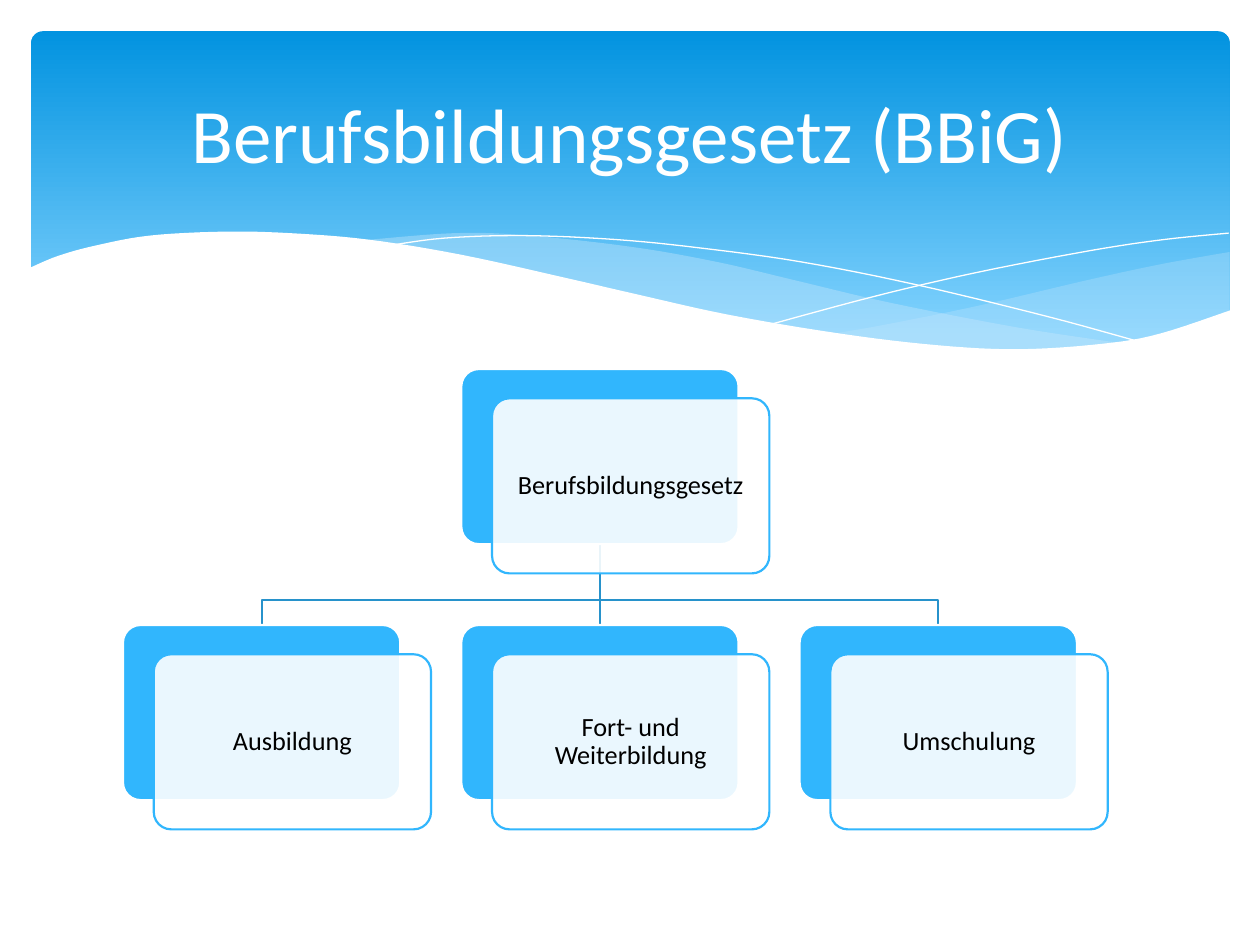
from lxml import etree
from pptx import Presentation
from pptx.dml.color import RGBColor
from pptx.enum import shapes, text
from pptx.oxml.ns import qn
from pptx.util import Cm, Pt

WHITE = RGBColor(0xFF, 0xFF, 0xFF)
BLACK = RGBColor(0, 0, 0)
DEEP = RGBColor(0x02, 0x93, 0xE0)
LIGHT = RGBColor(0x83, 0xD3, 0xFE)
PALE = RGBColor(0xC6, 0xE7, 0xFC)
BLUE = RGBColor(0x31, 0xB6, 0xFD)
STEEL = RGBColor(0x27, 0x92, 0xCB)
FONT = "Calibri"

# Outlines in centimetres; each list is a smooth curve through its points
RIGHT_TOP = [(24.79, 5.08), (23.39, 5.33), (21.87, 5.66), (19.79, 6.15),
             (17.93, 6.53), (16.79, 6.73)]
RIGHT_LOW = [(16.79, 6.73), (18.26, 6.91), (19.53, 7.04), (20.68, 7.06),
             (21.92, 6.99), (22.99, 6.83), (23.75, 6.65), (24.79, 6.27)]
MID_TOP = [(22.68, 6.93), (20.5, 6.6), (17.93, 6.1), (15.98, 5.64),
           (14.45, 5.28), (12.75, 4.98), (10.67, 4.75), (9.17, 4.7),
           (7.26, 4.85)]
MID_LOW = [(7.26, 4.85), (9.19, 5.16), (11.4, 5.64), (13.46, 6.1),
           (15.7, 6.55), (17.65, 6.86), (19.33, 7.04), (21.03, 7.06),
           (22.68, 6.93)]
FALL = [(7.85, 4.95), (8.97, 4.8), (10.57, 4.75), (12.42, 4.83), (14.12, 5),
        (16.15, 5.28), (18.47, 5.74), (21.11, 6.38), (23.04, 6.91)]
RISE = [(15.57, 6.53), (17.65, 5.97), (19.71, 5.49), (22, 5.05),
        (23.47, 4.83), (24.77, 4.7)]
EDGE = [(24.82, 6.25), (23.37, 6.73), (22.23, 6.93), (20.55, 7.04),
        (18.9, 6.96), (16.97, 6.73), (14.71, 6.35), (12.78, 5.92),
        (11.35, 5.59), (9.27, 5.13), (7.42, 4.83), (5.84, 4.7), (4.5, 4.67),
        (3.02, 4.75), (1.93, 4.95), (1.17, 5.16), (0.58, 5.41)]
FLOOR = [(0.58, 8.36), (24.82, 8.36)]

# Chart grid in centimetres
LEFT, STEP = 2.48, 6.82
TOP, ROW = 7.44, 12.6
WIDE, HIGH = 5.59, 3.53
SHIFT_X, SHIFT_Y = 0.62, 0.59
BEND = 12.09


def curve(knots, steps=6):
    """Points of a Catmull-Rom spline through the knots."""
    ends = [knots[0], *knots, knots[-1]]
    points = [knots[0]]
    for a, b, c, d in zip(ends, ends[1:], ends[2:], ends[3:]):
        for i in range(1, steps + 1):
            t = i / steps
            points.append(tuple(
                (2 * q + (r - p) * t + (2 * p - 5 * q + 4 * r - s) * t ** 2
                 + (3 * q - p - 3 * r + s) * t ** 3) / 2
                for p, q, r, s in zip(a, b, c, d)))
    return points


def paint(shape, fill=None, alpha=None, line=None, width=1.25):
    shape.shadow.inherit = False
    if fill is None:
        shape.fill.background()
    else:
        shape.fill.solid()
        shape.fill.fore_color.rgb = fill
    if alpha is not None:
        tone = shape.fill._xPr.find(".//" + qn("a:srgbClr"))
        etree.SubElement(tone, qn("a:alpha"), val=str(alpha * 1000))
    if line is None:
        shape.line.fill.background()
    else:
        shape.line.color.rgb = line
        shape.line.width = Pt(width)


def trace(slide, points, close=False, **look):
    spots = [(Cm(x), Cm(y)) for x, y in points]
    pen = slide.shapes.build_freeform(*spots[0], scale=1.0)
    pen.add_line_segments(spots[1:], close=close)
    paint(pen.convert_to_shape(), **look)


def round_box(slide, x, y, w, h, bend):
    box = slide.shapes.add_shape(shapes.MSO_SHAPE.ROUNDED_RECTANGLE,
                                 Cm(x), Cm(y), Cm(w), Cm(h))
    box.adjustments[0] = bend
    return box


def write(shape, words, size, color):
    frame = shape.text_frame
    frame.word_wrap = True
    frame.vertical_anchor = text.MSO_ANCHOR.MIDDLE
    par = frame.paragraphs[0]
    par.text = words
    par.alignment = text.PP_ALIGN.CENTER
    par.font.name, par.font.size = FONT, Pt(size)
    par.font.color.rgb = color
    return par


def banner(slide):
    """Gradient header with its waves."""
    box = round_box(slide, 0.63, 0.63, 24.16, 6.86, 0.034)
    paint(box)
    box.fill.gradient()
    box.fill.gradient_angle = 270
    for stop, color, spot in zip(box.fill.gradient_stops,
                                 (DEEP, LIGHT), (0, 0.9)):
        stop.color.rgb, stop.position = color, spot
    trace(slide, curve(RIGHT_TOP) + curve(RIGHT_LOW), True,
          fill=PALE, alpha=29)
    trace(slide, curve(MID_TOP) + curve(MID_LOW), True, fill=PALE, alpha=40)
    for knots in (FALL, RISE):
        trace(slide, curve(knots), line=WHITE, width=0)
    trace(slide, curve(EDGE) + FLOOR, True, fill=WHITE)


def card(slide, col, y, words):
    x = LEFT + col * STEP
    paint(round_box(slide, x, y, WIDE, HIGH, 0.1), BLUE, line=WHITE)
    front = round_box(slide, x + SHIFT_X, y + SHIFT_Y, WIDE, HIGH, 0.1)
    paint(front, WHITE, 90, BLUE)
    par = write(front, words, 15, BLACK)
    par.line_spacing = 0.9
    frame = front.text_frame
    frame.margin_left = frame.margin_right = Cm(0.26)
    frame.margin_top = frame.margin_bottom = Cm(0.26)


def links(slide):
    """Lines from the root card down to the row."""
    start = TOP + HIGH
    mid = LEFT + STEP + WIDE / 2
    for x in (mid + STEP, mid - STEP):
        trace(slide, [(mid, start), (mid, BEND), (x, BEND), (x, ROW)],
              line=STEEL)
    stem = slide.shapes.add_connector(shapes.MSO_CONNECTOR.STRAIGHT,
                                      Cm(mid), Cm(start), Cm(mid), Cm(ROW))
    stem.line.color.rgb = STEEL
    stem.line.width = Pt(1.25)
    etree.SubElement(stem._element.spPr, qn("a:effectLst"))


def main():
    deck = Presentation()
    deck.slide_width, deck.slide_height = Cm(25.4), Cm(19.05)
    slide = deck.slides.add_slide(deck.slide_layouts[6])
    banner(slide)
    links(slide)
    card(slide, 1, TOP, "Berufsbildungsgesetz")
    for col, words in enumerate(("Ausbildung", "Fort- und Weiterbildung",
                                 "Umschulung")):
        card(slide, col, ROW, words)
    title = slide.shapes.add_textbox(Cm(1.27), Cm(0.94), Cm(22.86), Cm(3.48))
    write(title, "Berufsbildungsgesetz (BBiG)", 44, WHITE)
    deck.save("out.pptx")


if __name__ == "__main__":
    main()
